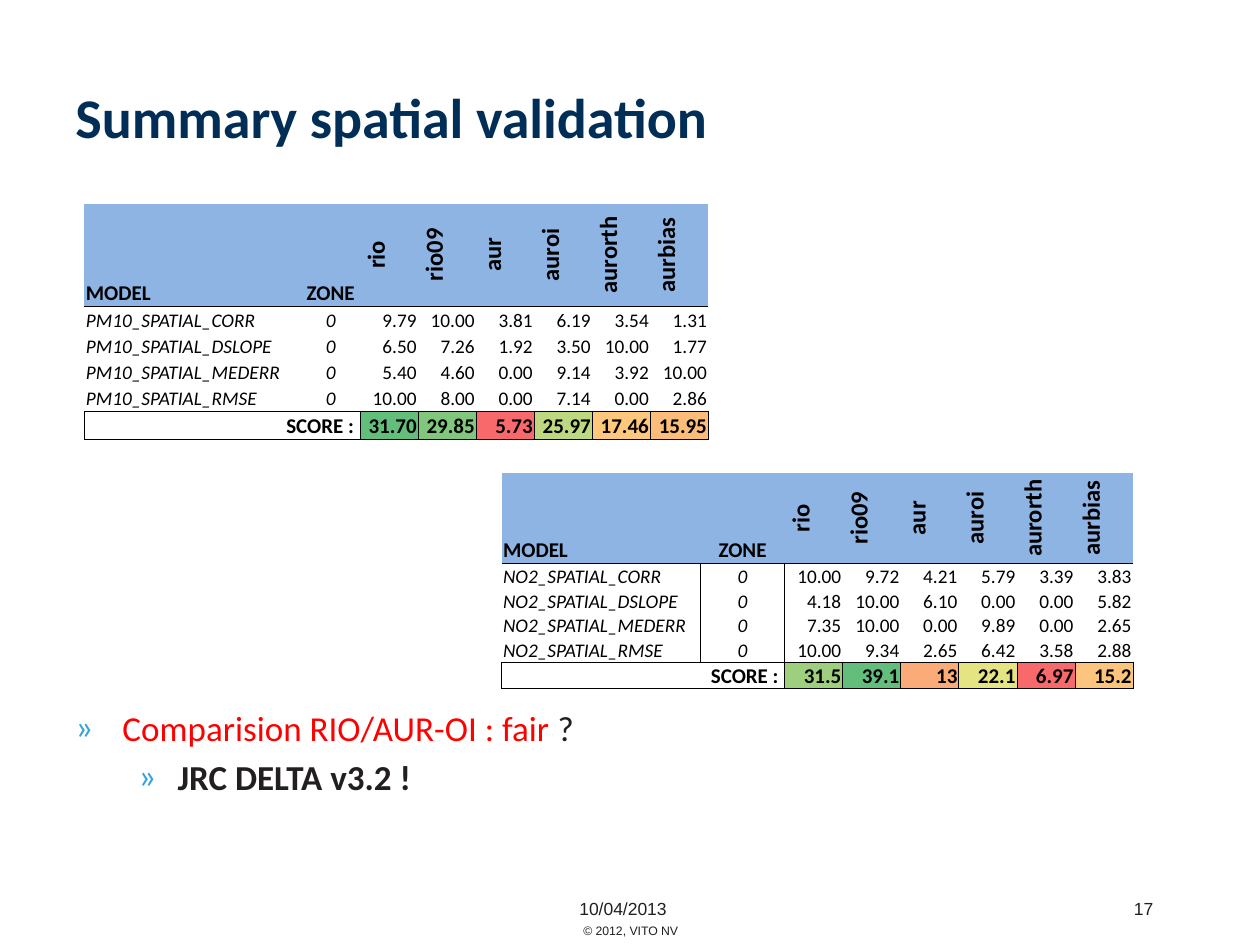
from lxml import etree
from pptx import Presentation
from pptx.dml.color import RGBColor
from pptx.enum.text import MSO_ANCHOR, PP_ALIGN
from pptx.oxml.ns import qn
from pptx.util import Cm, Pt

LEFT, CENTER, RIGHT = PP_ALIGN.LEFT, PP_ALIGN.CENTER, PP_ALIGN.RIGHT
TOP, MIDDLE, BOTTOM = MSO_ANCHOR.TOP, MSO_ANCHOR.MIDDLE, MSO_ANCHOR.BOTTOM

COLORS = {"title": "002E56", "text": "231F20", "alert": "FF0000", "bullet": "34A3DC",
          "black": "000000", "header": "8DB4E3"}

FORMATS = {
    "title": {"size": Pt(32), "name": "Calibri", "bold": True, "color": "title"},
    "body": {"size": Pt(20), "name": "Calibri", "bold": False, "color": "text"},
    "alert": {"size": Pt(20), "name": "Calibri", "bold": False, "color": "alert"},
    "strong": {"size": Pt(20), "name": "Calibri", "bold": True, "color": "text"},
    "footer": {"size": Pt(10), "name": "Arial", "color": "text"},
    "copyright": {"size": Pt(7), "name": "Arial", "color": "text"},
    "label": {"size": Pt(12), "name": "Calibri", "bold": True, "color": "black"},
    "model": {"size": Pt(14), "name": "Calibri", "bold": True, "color": "black"},
    "value": {"size": Pt(11), "name": "Calibri", "bold": False, "color": "black"},
    "name": {"size": Pt(11), "name": "Calibri", "bold": False, "italic": True,
             "color": "black"},
}

MODELS = ["rio", "rio09", "aur", "auroi", "aurorth", "aurbias"]
MEASURES = ["CORR", "DSLOPE", "MEDERR", "RMSE"]

PM10 = {
    "pollutant": "PM10",
    "values": ["9.79 10.00 3.81 6.19 3.54 1.31", "6.50 7.26 1.92 3.50 10.00 1.77",
               "5.40 4.60 0.00 9.14 3.92 10.00", "10.00 8.00 0.00 7.14 0.00 2.86"],
    "scores": {"31.70": "63BE7B", "29.85": "80C77D", "5.73": "F8696B",
               "25.97": "BDD881", "17.46": "FDC87D", "15.95": "FCBC7A"},
}
NO2 = {
    "pollutant": "NO2",
    "values": ["10.00 9.72 4.21 5.79 3.39 3.83", "4.18 10.00 6.10 0.00 0.00 5.82",
               "7.35 10.00 0.00 9.89 0.00 2.65", "10.00 9.34 2.65 6.42 3.58 2.88"],
    "scores": {"31.5": "9DCF7F", "39.1": "63BE7B", "13": "FBAB77",
               "22.1": "E5E483", "6.97": "F8696B", "15.2": "FCC47C"},
}


class PageBuilder:
    def __init__(self, page):
        self.page = page

    def add_span(self, para, text, style):
        span = para.add_run()
        span.text = text
        for key, value in FORMATS[style].items():
            if key == "color":
                span.font.color.rgb = RGBColor.from_string(COLORS[value])
            else:
                setattr(span.font, key, value)

    def text_box(self, left, top, width, height, anchor=TOP, wrap=True):
        box = self.page.shapes.add_textbox(Cm(left), Cm(top), Cm(width), Cm(height))
        frame = box.text_frame
        frame.word_wrap = wrap
        frame.vertical_anchor = anchor
        return frame

    def line(self, place, text, style, align=LEFT, **options):
        para = self.text_box(*place, **options).paragraphs[0]
        para.alignment = align
        self.add_span(para, text, style)

    def bullet(self, para, indent, hanging, spans):
        props = para._p.get_or_add_pPr()
        props.set("marL", str(Cm(indent)))
        props.set("indent", str(-Cm(hanging)))
        color = etree.SubElement(props, qn("a:buClr"))
        etree.SubElement(color, qn("a:srgbClr"), val=COLORS["bullet"])
        etree.SubElement(props, qn("a:buFont"), typeface="Calibri")
        etree.SubElement(props, qn("a:buChar"), char="»")
        for text, style in spans:
            self.add_span(para, text, style)

    def borders(self, cell, sides):
        props = cell._tc.get_or_add_tcPr()
        for side in "LRTB":
            edge = etree.SubElement(props, qn(f"a:ln{side}"), w=str(Pt(0.5)))
            if side in sides:
                fill = etree.SubElement(edge, qn("a:solidFill"))
                etree.SubElement(fill, qn("a:srgbClr"), val=COLORS["black"])
            else:
                etree.SubElement(edge, qn("a:noFill"))

    def cell(self, cell, text, style, align, sides="", fill=None, upright=False):
        cell.margin_left = cell.margin_right = cell.margin_top = Cm(0.03)
        cell.margin_bottom = 0
        cell.vertical_anchor = BOTTOM
        self.borders(cell, sides)
        if upright:
            cell._tc.get_or_add_tcPr().set("vert", "vert270")
        if fill:
            cell.fill.solid()
            cell.fill.fore_color.rgb = RGBColor.from_string(fill)
        else:
            cell.fill.background()
        para = cell.text_frame.paragraphs[0]
        para.alignment = align
        if text:
            self.add_span(para, text, style)

    def score_table(self, left, top, widths, heights, data, zone_lines=False):
        table = self.page.shapes.add_table(
            len(heights), len(widths), Cm(left), Cm(top),
            Cm(sum(widths)), Cm(sum(heights))).table
        table.first_row = table.horz_banding = False
        for column, width in zip(table.columns, widths):
            column.width = Cm(width)
        for row, height in zip(table.rows, heights):
            row.height = Cm(height)

        # Header row
        for col, text in enumerate(["MODEL", "ZONE"] + MODELS):
            self.cell(table.cell(0, col), text, "model" if col > 1 else "label",
                      CENTER if col else LEFT, "B", COLORS["header"], col > 1)

        # One row per measure
        for row, (measure, values) in enumerate(zip(MEASURES, data["values"]), 1):
            edge = {1: "T", len(MEASURES): "B"}.get(row, "")
            name = f"{data['pollutant']}_SPATIAL_{measure}"
            for col, text in enumerate([name, "0"] + values.split()):
                sides = edge + ({0: "R", 1: "LR", 2: "L"}.get(col, "") if zone_lines else "")
                self.cell(table.cell(row, col), text, "value" if col > 1 else "name",
                          (LEFT, CENTER, RIGHT)[min(col, 2)], sides)

        # Score row
        last = len(heights) - 1
        scores = [("SCORE : ", None), ("", None), *data["scores"].items()]
        for col, (text, fill) in enumerate(scores):
            self.cell(table.cell(last, col), text, "label", RIGHT, "LRTB", fill)
        table.cell(last, 0).merge(table.cell(last, 1))


def main():
    deck = Presentation()
    deck.slide_width, deck.slide_height = Cm(25.4), Cm(19.05)
    builder = PageBuilder(deck.slides.add_slide(deck.slide_layouts[6]))

    # Footer
    builder.line((11.43, 17.98, 2.54, 0.64), "10/04/2013", "footer")
    builder.line((21.16, 17.98, 2.34, 0.64), "17", "footer", RIGHT)
    builder.line((11.46, 18.49, 2.46, 0.56), "© 2012, VITO NV", "copyright", RIGHT,
                 wrap=False)

    # Title
    builder.line((1.27, 0.76, 22.86, 3.18), "Summary spatial validation", "title",
                 anchor=MIDDLE)

    # Conclusions
    frame = builder.text_box(1.27, 14.12, 22.86, 2.9)
    builder.bullet(frame.paragraphs[0], 0.95, 0.95,
                   [("Comparision RIO/AUR-OI : fair ", "alert"), ("?", "body")])
    para = frame.add_paragraph()
    para.space_before = Pt(4)
    builder.bullet(para, 2.06, 0.79, [("JRC DELTA v3.2 !", "strong")])

    # Score tables
    models = [1.17] * len(MODELS)
    builder.score_table(1.7, 4.11, [4.37, 1.19] + models,
                        [2.06] + [0.53] * 4 + [0.56], PM10)
    builder.score_table(10.11, 9.53, [4.01, 1.7] + models,
                        [1.83] + [0.43] * 4 + [0.46], NO2, zone_lines=True)

    deck.save("out.pptx")


if __name__ == "__main__":
    main()
